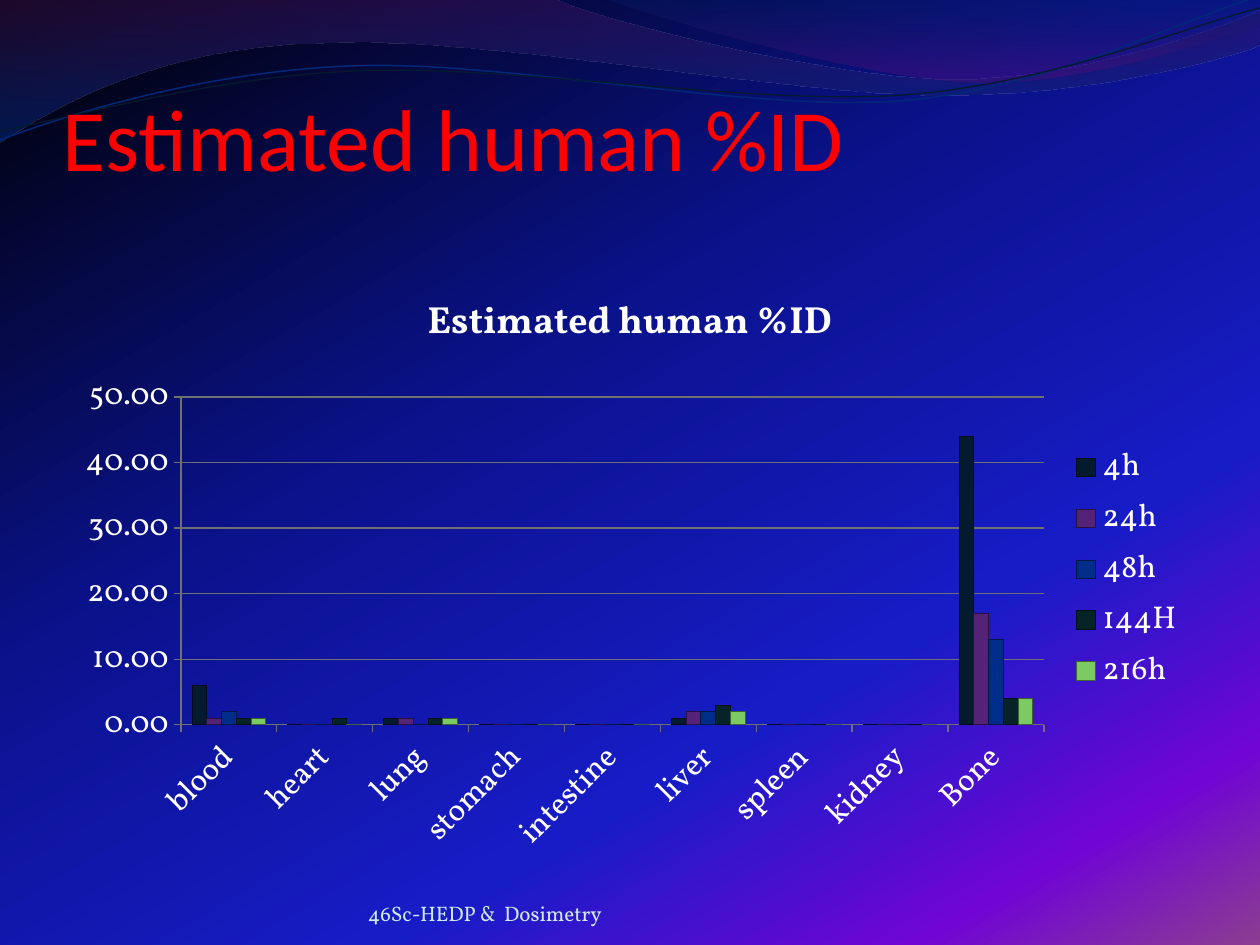
"""Build the estimated human %ID slide with its wave header and column chart."""
from dataclasses import dataclass
from typing import Optional

from lxml import etree
from pptx import Presentation
from pptx import util as u
from pptx.chart.data import CategoryChartData
from pptx.dml.color import RGBColor
from pptx.enum import chart as ch, text
from pptx.oxml import parse_xml
from pptx.oxml.ns import nsdecls, qn

SCALE = 914400 / 126

RED = RGBColor(0xFF, 0x00, 0x00)
WHITE = RGBColor(0xFF, 0xFF, 0xFF)
PALE = RGBColor(0xD1, 0xEA, 0xEE)
GRAY = RGBColor(0x70, 0x70, 0x70)
BLACK = RGBColor(0x00, 0x00, 0x00)
NIGHT = RGBColor(0x0A, 0x12, 0x8C)
BLUE = RGBColor(0x18, 0x1C, 0xC7)
VIOLET = RGBColor(0x70, 0x05, 0xD4)
MAUVE = RGBColor(0x8C, 0x3D, 0x91)
PLUM = RGBColor(0x3F, 0x14, 0x5F)
NAVY = RGBColor(0x00, 0x29, 0x7C)
DEEP_NAVY = RGBColor(0x00, 0x21, 0x65)
GRAPE = RGBColor(0x4C, 0x10, 0x79)
COBALT = RGBColor(0x00, 0x28, 0x79)
INK = RGBColor(0x04, 0x1A, 0x2E)
PURPLE = RGBColor(0x54, 0x23, 0x78)
ROYAL = RGBColor(0x00, 0x2D, 0x89)
PINE = RGBColor(0x06, 0x23, 0x28)
GREEN = RGBColor(0x7C, 0xCA, 0x62)


@dataclass(frozen=True)
class Stop:
    position: int
    color: RGBColor
    opacity: int = 100


@dataclass(frozen=True)
class Wave:
    """A path of px points: two numbers are a line, six are a Bezier curve."""
    start: tuple
    segments: tuple
    stops: tuple = ()
    line: Optional[RGBColor] = None
    width: float = 0


@dataclass(frozen=True)
class Label:
    words: str
    frame: tuple
    font: str
    size: int
    color: RGBColor


@dataclass(frozen=True)
class Series:
    name: str
    color: RGBColor
    values: tuple


BACKDROP = (Stop(0, BLACK), Stop(40, NIGHT), Stop(70, BLUE), Stop(88, VIOLET), Stop(100, MAUVE))
WAVES = (
    Wave((0, 0), ((554, -1), (600, 21, 837, 79, 955, 79), (1075, 79, 1207, 33, 1260, 11),
                  (1261, 45), (1239, 55, 1096, 96, 940, 95), (784, 95, 481, 35, 324, 43),
                  (163, 45, 58, 105, -1, 142), (0, 0)),
         (Stop(0, PLUM, 45), Stop(100, NAVY, 55))),
    Wave((604, -1), ((641, 14, 859, 78, 969, 82), (1079, 87, 1211, 40, 1260, 26), (1260, 0), (604, -1)),
         (Stop(0, DEEP_NAVY, 30), Stop(80, GRAPE, 45))),
    Wave((0, 140), ((60, 117, 199, 72, 349, 66), (498, 59, 747, 112, 898, 101),
                    (1050, 89, 1182, 19, 1257, -3)), line=COBALT, width=0.85),
    Wave((0, 131), ((59, 121, 207, 77, 357, 71), (508, 64, 752, 106, 903, 95),
                    (1053, 84, 1186, 26, 1260, 8)), line=INK, width=0.75),
)
LABELS = (
    Label("Estimated human %ID", (63, 32, 1134, 157), "Calibri", 50, RED),
    Label("46Sc-HEDP &  Dosimetry", (368, 876, 462, 50), "Vollkorn", 12, PALE),
)
CHART_FRAME = (63, 267, 1134, 605)
PLOT_FRAME = (181, 397, 863, 328)
CATEGORIES = ("blood", "heart", "lung", "stomach", " intestine", "liver", "spleen", "kidney", "Bone")
SERIES = (
    Series("4h", INK, (6, 0, 1, 0, 0, 1, 0, 0, 44)),
    Series("24h", PURPLE, (1, 0, 1, 0, 0, 2, 0, 0, 17)),
    Series("48h", ROYAL, (2, 0, 0, 0, 0, 2, 0, 0, 13)),
    Series("144H", PINE, (1, 1, 1, 0, 0, 3, 0, 0, 4)),
    Series("216h", GREEN, (1, 0, 1, 0, 0, 2, 0, 0, 4)),
)


def px(length: float) -> u.Emu:
    """Turn px into EMU."""
    return u.Emu(round(length * SCALE))


def set_gradient(fill, parent, stops: tuple, angle: int) -> None:
    """Give the parent element a linear gradient of any number of stops."""
    fill.solid()
    marks = "".join(
        f'<a:gs pos="{stop.position * 1000}"><a:srgbClr val="{stop.color}">'
        f'<a:alpha val="{stop.opacity * 1000}"/></a:srgbClr></a:gs>' for stop in stops)
    gradient = parse_xml(f'<a:gradFill {nsdecls("a")} rotWithShape="1"><a:gsLst>{marks}</a:gsLst>'
                         f'<a:lin ang="{angle * 60000}" scaled="0"/></a:gradFill>')
    parent.replace(parent.find(qn("a:solidFill")), gradient)


def bend(shape, segments: tuple) -> None:
    """Join each curve's three straight steps into one Bezier segment."""
    steps = iter(list(shape._element.spPr.iter(qn("a:lnTo"))))
    for segment in segments:
        group = [next(steps) for _ in range(len(segment) // 2)]
        if len(group) == 3:
            curve = etree.Element(qn("a:cubicBezTo"))
            group[0].addprevious(curve)
            for step in group:
                curve.append(step[0])
                step.getparent().remove(step)


def draw_wave(page, wave: Wave) -> None:
    """Draw a filled band or an open line."""
    points = [(px(s[i]), px(s[i + 1])) for s in wave.segments for i in range(0, len(s), 2)]
    builder = page.shapes.build_freeform(*map(px, wave.start))
    builder.add_line_segments(points, close=False)
    shape = builder.convert_to_shape()
    bend(shape, wave.segments)
    shape.shadow.inherit = False
    if wave.stops:
        set_gradient(shape.fill, shape._element.spPr, wave.stops, 90)
        shape.line.fill.background()
    else:
        shape.fill.background()
        shape.line.color.rgb = wave.line
        shape.line.width = u.Pt(wave.width)


def draw_label(page, label: Label) -> None:
    """Draw bottom-anchored text without margins."""
    frame = page.shapes.add_textbox(*map(px, label.frame)).text_frame
    frame.word_wrap = True
    frame.vertical_anchor = text.MSO_ANCHOR.BOTTOM
    frame.margin_left = frame.margin_right = frame.margin_top = frame.margin_bottom = 0
    para = frame.paragraphs[0]
    para.text = label.words
    style_font(para.font, label.font, label.size, label.color)


def style_font(font, name: str, size: float, color: RGBColor) -> None:
    """Set a font's face, size and colour."""
    font.name, font.size, font.color.rgb = name, u.Pt(size), color


def place_plot(chart) -> None:
    """Fix the inner plot area inside the chart frame."""
    left, top, width, height = CHART_FRAME
    x, y, w, h = PLOT_FRAME
    area = chart._chartSpace.chart.plotArea
    for old in area.findall(qn("c:layout")):
        area.remove(old)
    layout = etree.Element(qn("c:layout"))
    manual = etree.SubElement(layout, qn("c:manualLayout"))
    values = {"layoutTarget": "inner", "xMode": "edge", "yMode": "edge",
              "x": (x - left) / width, "y": (y - top) / height, "w": w / width, "h": h / height}
    for tag, value in values.items():
        etree.SubElement(manual, qn(f"c:{tag}")).set("val", str(value))
    area.insert(0, layout)


def draw_chart(page) -> None:
    """Draw the clustered columns of uptake by organ and time."""
    data = CategoryChartData(number_format="0.00")
    data.categories = CATEGORIES
    for series in SERIES:
        data.add_series(series.name, series.values)
    chart = page.shapes.add_chart(ch.XL_CHART_TYPE.COLUMN_CLUSTERED, *map(px, CHART_FRAME), data).chart
    style_font(chart.font, "Vollkorn", 18, WHITE)
    para = chart.chart_title.text_frame.paragraphs[0]
    para.text = "Estimated human %ID"
    style_font(para.font, "Vollkorn", 21.6, WHITE)
    para.font.bold = True
    chart.has_legend = True
    chart.legend.include_in_layout = False
    plot = chart.plots[0]
    plot.gap_width, plot.overlap, plot.vary_by_categories = 150, 0, False
    for column, series in zip(plot.series, SERIES):
        column.format.fill.solid()
        column.format.fill.fore_color.rgb = series.color
        column.format.line.color.rgb = RGBColor(*(part // 2 for part in series.color))
    for axis in (chart.category_axis, chart.value_axis):
        axis.major_tick_mark = ch.XL_TICK_MARK.OUTSIDE
        axis.format.line.color.rgb = GRAY
    chart.category_axis.tick_labels.font.size = u.Pt(18)
    chart.category_axis._element.txPr.bodyPr.set("rot", str(-45 * 60000))
    scale = chart.value_axis
    scale.minimum_scale, scale.maximum_scale, scale.major_unit = 0, 50, 10
    scale.major_gridlines.format.line.color.rgb = GRAY
    place_plot(chart)


def main() -> None:
    """Build and save the deck."""
    deck = Presentation()
    deck.slide_width, deck.slide_height = px(1260), px(945)
    page = deck.slides.add_slide(deck.slide_layouts[6])
    set_gradient(page.background.fill, page._element.cSld.bg.bgPr, BACKDROP, 60)
    for wave in WAVES:
        draw_wave(page, wave)
    for label in LABELS:
        draw_label(page, label)
    draw_chart(page)
    deck.save("out.pptx")


if __name__ == "__main__":
    main()
